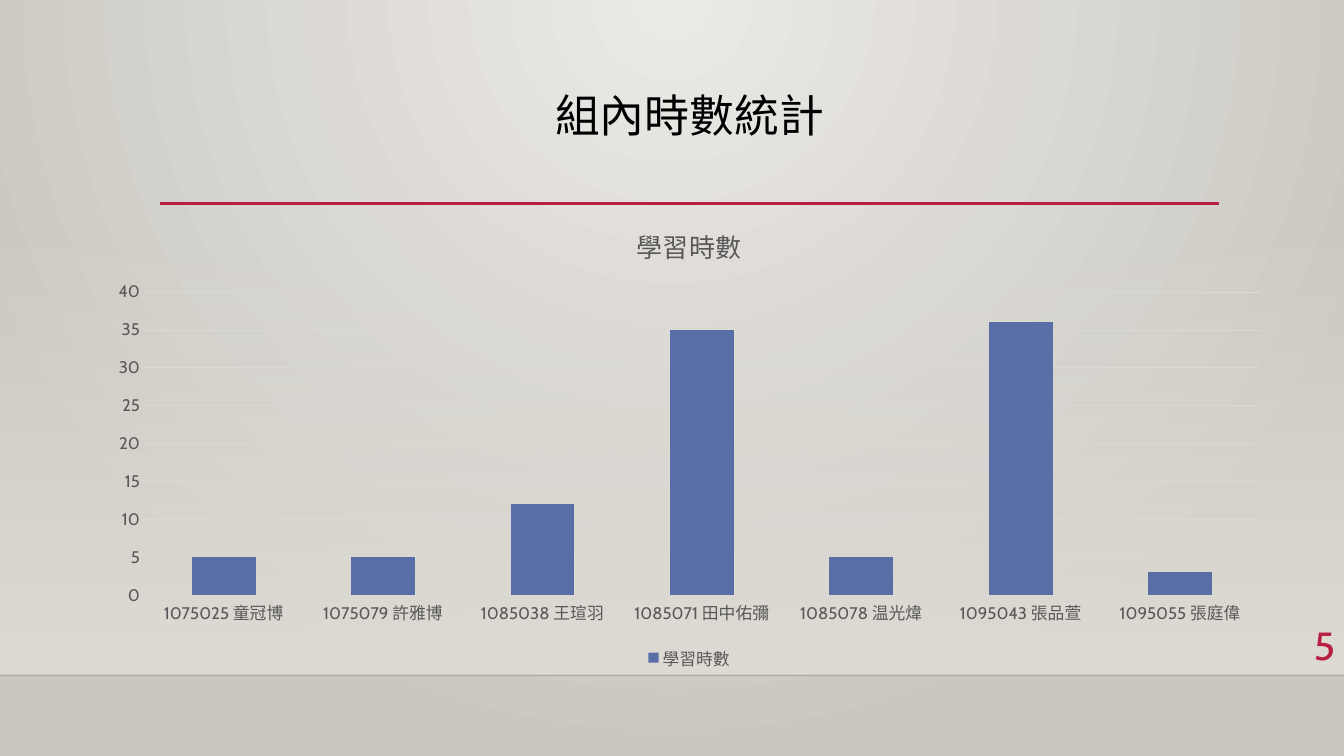
from pptx import Presentation
from pptx.chart.data import CategoryChartData as ChartData
from pptx.dml.color import RGBColor
from pptx.enum.chart import XL_CHART_TYPE as Kind, XL_LEGEND_POSITION as Legend
from pptx.enum.chart import XL_TICK_MARK as Tick
from pptx.enum.shapes import MSO_CONNECTOR as Wire, MSO_SHAPE as Shape
from pptx.enum.text import MSO_ANCHOR as Anchor, PP_ALIGN as Align
from pptx.oxml.ns import qn
from pptx.util import Inches, Pt
from lxml.etree import SubElement

FACE = "Cabin"
BLACK = RGBColor(0x00, 0x00, 0x00)
EDGE = RGBColor(0x00, 0x00, 0x01)
RED = RGBColor(0xB7, 0x1E, 0x42)
BLUE = RGBColor(0x58, 0x6E, 0xA6)
GREY = RGBColor(0x59, 0x59, 0x59)
PALE = RGBColor(0xD9, 0xD9, 0xD9)
LIGHT = RGBColor(0xEC, 0xEA, 0xE7)
DARK = RGBColor(0xCA, 0xC7, 0xC1)
WALL = RGBColor(0xDF, 0xDB, 0xD5)

WIDE, HIGH = 13.33, 7.5
FLOOR = 6.7
HOURS = {
    "1075025 童冠博": 5,
    "1075079 許雅博": 5,
    "1085038 王瑄羽": 12,
    "1085071 田中佑彌": 35,
    "1085078 温光煒": 5,
    "1095043 張品萱": 36,
    "1095055 張庭偉": 3,
}


def set_font(font, size, color):
    font.name, font.size = FACE, Pt(size)
    font.color.rgb = color


def blend(fill, *colors):
    fill.gradient()
    for stop, color in zip(fill.gradient_stops, colors):
        stop.color.rgb = color


def fade(root, share):
    """Make the first colour under root partly clear."""
    color = next(root.iter(qn("a:srgbClr")))
    SubElement(color, qn("a:alpha"), val=str(share * 1000))


def add_rule(slide, left, top, width, color, weight):
    ends = [Inches(n) for n in (left, top, left + width, top)]
    rule = slide.shapes.add_connector(Wire.STRAIGHT, *ends)
    rule.line.color.rgb, rule.line.width = color, Pt(weight)
    SubElement(rule._element.spPr, qn("a:effectLst"))
    return rule


def add_text(slide, box, text, size, color, align, anchor):
    frame = slide.shapes.add_textbox(*map(Inches, box)).text_frame
    frame.word_wrap, frame.vertical_anchor = True, anchor
    para = frame.paragraphs[0]
    para.text, para.alignment = text, align
    set_font(para.font, size, color)
    return para


def add_scene(slide, top):
    # Round glow behind everything
    blend(slide.background.fill, LIGHT, DARK)
    grad = next(slide._element.iter(qn("a:gradFill")))
    for lin in grad.findall(qn("a:lin")):
        grad.remove(lin)
    glow = SubElement(grad, qn("a:path"), path="circle")
    SubElement(glow, qn("a:fillToRect"), l="43000", t="0", r="43000", b="100000")

    # Wall fading in down to the floor edge
    box = (0, top, WIDE, FLOOR - top)
    wall = slide.shapes.add_shape(Shape.RECTANGLE, *map(Inches, box))
    wall.shadow.inherit = False
    wall.line.fill.background()
    blend(wall.fill, WALL, WALL)
    wall.fill.gradient_angle = 270
    fade(wall._element.spPr, 0)
    edge = add_rule(slide, 0, FLOOR, WIDE, EDGE, 1)
    fade(edge._element.spPr, 20)


def add_head(slide, left, top, width, height):
    para = add_text(slide, (left, top, width, height), "組內時數統計",
                    32, BLACK, Align.CENTER, Anchor.TOP)
    para.line_spacing = 0.9
    add_rule(slide, left, top + height - 0.01, width, RED, 2.5)


def add_hours(slide, box):
    data = ChartData()
    data.categories = HOURS.keys()
    data.add_series("學習時數", HOURS.values())
    chart = slide.shapes.add_chart(
        Kind.COLUMN_STACKED, *map(Inches, box), data).chart
    set_font(chart.font, 10, BLACK)

    # Title and legend
    chart.has_title = True
    para = chart.chart_title.text_frame.paragraphs[0]
    para.text = "學習時數"
    set_font(para.font, 18.6, GREY)
    para.font.bold = False
    chart.chart_title.include_in_layout = False
    chart.has_legend = True
    chart.legend.position = Legend.BOTTOM
    chart.legend.include_in_layout = False
    set_font(chart.legend.font, 12, GREY)

    # Axes
    names, scale = chart.category_axis, chart.value_axis
    for axis in (names, scale):
        axis.major_tick_mark = axis.minor_tick_mark = Tick.NONE
        set_font(axis.tick_labels.font, 12, GREY)
    scale.has_major_gridlines = True
    scale.format.line.fill.background()
    for line in (names.format.line, scale.major_gridlines.format.line):
        line.color.rgb, line.width = PALE, Pt(0.75)

    # Columns
    plot = chart.plots[0]
    plot.gap_width, plot.overlap = 150, 100
    plot.vary_by_categories = False
    fill = plot.series[0].format.fill
    fill.solid()
    fill.fore_color.rgb = BLUE


def main():
    deck = Presentation()
    deck.slide_width, deck.slide_height = Inches(WIDE), Inches(HIGH)
    slide = deck.slides.add_slide(deck.slide_layouts[6])
    add_scene(slide, 2.21)
    add_head(slide, 1.59, 0.88, 10.5, 1.15)
    add_hours(slide, (0.94, 2.03, 11.79, 4.66))
    # Page number
    add_text(slide, (12.45, 6.12, 0.89, 0.55), "5",
             28, RED, Align.RIGHT, Anchor.MIDDLE)
    deck.save("out.pptx")


if __name__ == "__main__":
    main()
